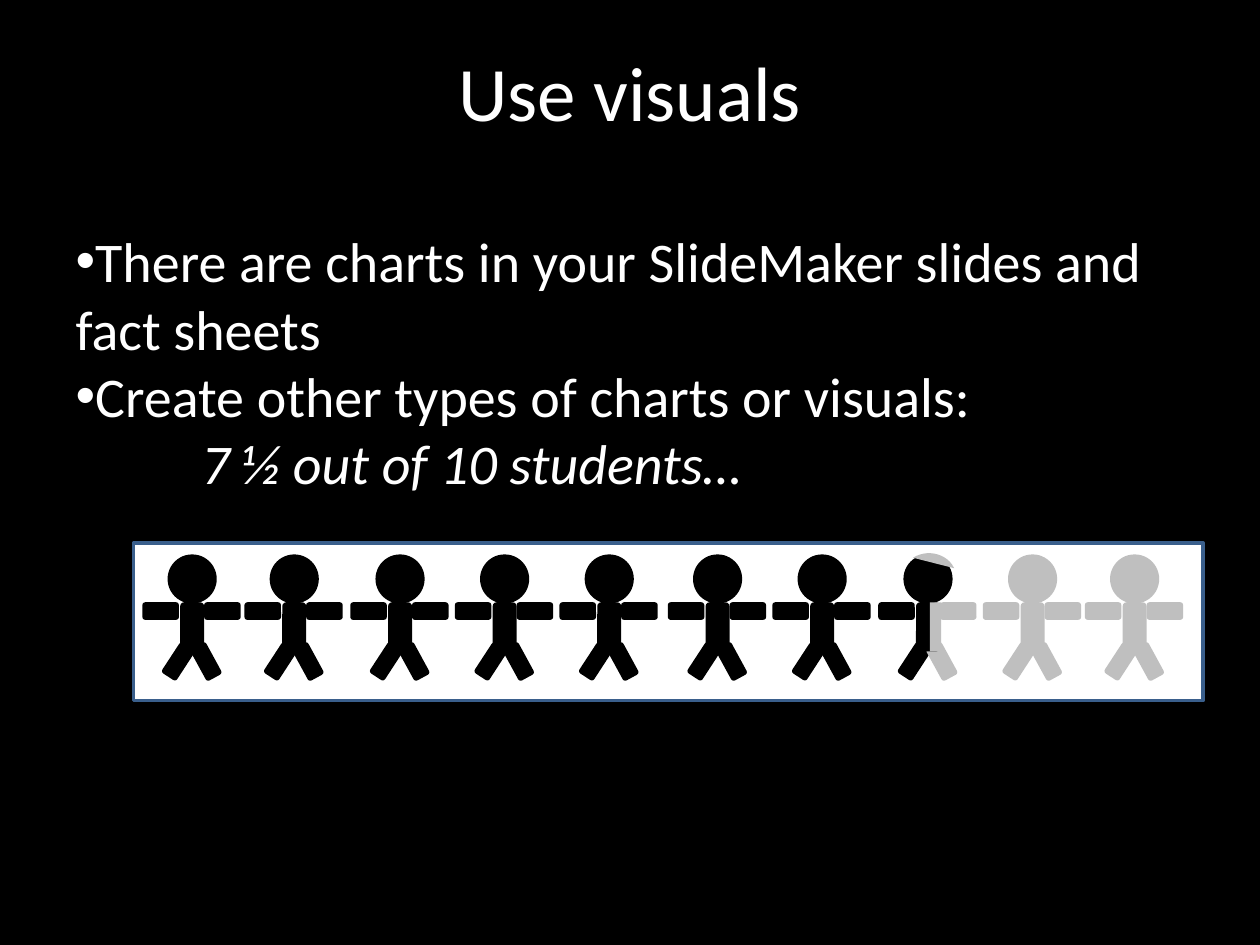
from dataclasses import dataclass

from lxml import etree
from pptx import Presentation
from pptx.dml.color import RGBColor
from pptx.enum import shapes, text
from pptx.oxml import ns
from pptx.util import Inches, Pt

COLORS = {
    "background": "000000",
    "text": "FFFFFF",
    "panel": "FFFFFF",
    "border": "3A5F8C",
    "counted": "000000",
    "rest": "BFBFBF",
}
FONT = "Calibri"
KIND = shapes.MSO_SHAPE


@dataclass(frozen=True)
class Part:
    """One piece of a figure, placed from the figure's left edge."""
    kind: int
    left: float
    top: float
    width: float
    height: float
    rotation: float = 0
    right_side: bool = False
    angles: tuple = ()


@dataclass(frozen=True)
class Line:
    words: str
    bullet: bool = True
    indent: float = 0


FIGURE = (
    Part(KIND.OVAL, 0.2, 4.4, 0.39, 0.39),
    Part(KIND.ROUNDED_RECTANGLE, 0, 4.78, 0.29, 0.14),
    Part(KIND.ROUNDED_RECTANGLE, 0.49, 4.78, 0.29, 0.14, right_side=True),
    Part(KIND.ROUNDED_RECTANGLE, 0.14, 5.18, 0.29, 0.14, 303.1),
    Part(KIND.ROUNDED_RECTANGLE, 0.36, 5.18, 0.29, 0.14, 61.4, right_side=True),
    Part(KIND.ROUNDED_RECTANGLE, 0.3, 4.78, 0.19, 0.39),
)
# Grey half of the head and body, laid over the half-counted figure
HALF_COVER = (
    Part(KIND.CHORD, 0.18, 4.39, 0.44, 0.4, 176.3, True, (56.42, 162)),
    Part(KIND.RECTANGLE, 0.41, 4.78, 0.09, 0.39, right_side=True),
)
FIGURE_LEFTS = (1.13, 1.94, 2.78, 3.61, 4.44, 5.3, 6.13, 6.97, 7.8, 8.61)
STUDENTS = 7.5

LINES = (
    Line("There are charts in your SlideMaker slides and fact sheets"),
    Line("Create other types of charts or visuals:"),
    Line("7 ½ out of 10 students…", bullet=False, indent=1),
)


def rgb(name: str) -> RGBColor:
    return RGBColor.from_string(COLORS[name])


def place(box, left: float, top: float, width: float, height: float) -> None:
    box.left, box.top = Inches(left), Inches(top)
    box.width, box.height = Inches(width), Inches(height)
    frame = box.text_frame
    frame.word_wrap = True
    frame.auto_size = text.MSO_AUTO_SIZE.NONE
    frame.vertical_anchor = text.MSO_ANCHOR.TOP


def add_span(para, words: str, size: float, italic: bool = False) -> None:
    span = para.add_run()
    span.text = words
    span.font.name = FONT
    span.font.size = Pt(size)
    span.font.italic = italic
    span.font.color.rgb = rgb("text")


def add_line(para, line: Line) -> None:
    para.space_before = Pt(0)
    settings = para._p.get_or_add_pPr()
    settings.set("marL", str(Inches(line.indent)))
    settings.set("indent", "0")
    if not line.bullet:
        etree.SubElement(settings, ns.qn("a:buNone"))
    add_span(para, line.words, 32, italic=not line.bullet)


def draw_part(group, part: Part, left: float, color: str) -> None:
    shape = group.shapes.add_shape(
        part.kind, Inches(left + part.left), Inches(part.top),
        Inches(part.width), Inches(part.height))
    shape.rotation = part.rotation
    for index, degrees in enumerate(part.angles):
        shape.adjustments[index] = degrees * 0.6  # 60000 units to a degree
    shape.shadow.inherit = False
    shape.fill.solid()
    shape.fill.fore_color.rgb = rgb(color)
    shape.line.fill.background()


def draw_figure(page, left: float, share: float) -> None:
    """Draw a student of whom a share of 0, one half or 1 is counted."""
    group = page.shapes.add_group_shape()
    half = 0 < share < 1
    for part in FIGURE + (HALF_COVER if half else ()):
        grey = share == 0 or (half and part.right_side)
        draw_part(group, part, left, "rest" if grey else "counted")


def main() -> None:
    deck = Presentation()
    deck.slide_width, deck.slide_height = Inches(10), Inches(7.5)
    page = deck.slides.add_slide(deck.slide_layouts[1])
    page.background.fill.solid()
    page.background.fill.fore_color.rgb = rgb("background")

    # Title
    title = page.shapes.title
    place(title, 0.5, 0.3, 9, 1.25)
    para = title.text_frame.paragraphs[0]
    para.alignment = text.PP_ALIGN.CENTER
    add_span(para, "Use visuals", 44)

    # List
    body = page.placeholders[1]
    place(body, 0.5, 1.75, 9, 4.95)
    for index, line in enumerate(LINES):
        frame = body.text_frame
        add_line(frame.add_paragraph() if index else frame.paragraphs[0], line)

    # Panel behind the students
    panel = page.shapes.add_shape(
        KIND.RECTANGLE, Inches(1.06), Inches(4.31), Inches(8.49), Inches(1.25))
    panel.shadow.inherit = False
    panel.fill.solid()
    panel.fill.fore_color.rgb = rgb("panel")
    panel.line.color.rgb = rgb("border")
    panel.line.width = Pt(2)

    # Ten students
    for index, left in enumerate(FIGURE_LEFTS):
        draw_figure(page, left, min(1, max(0, STUDENTS - index)))

    deck.save("out.pptx")


if __name__ == "__main__":
    main()
